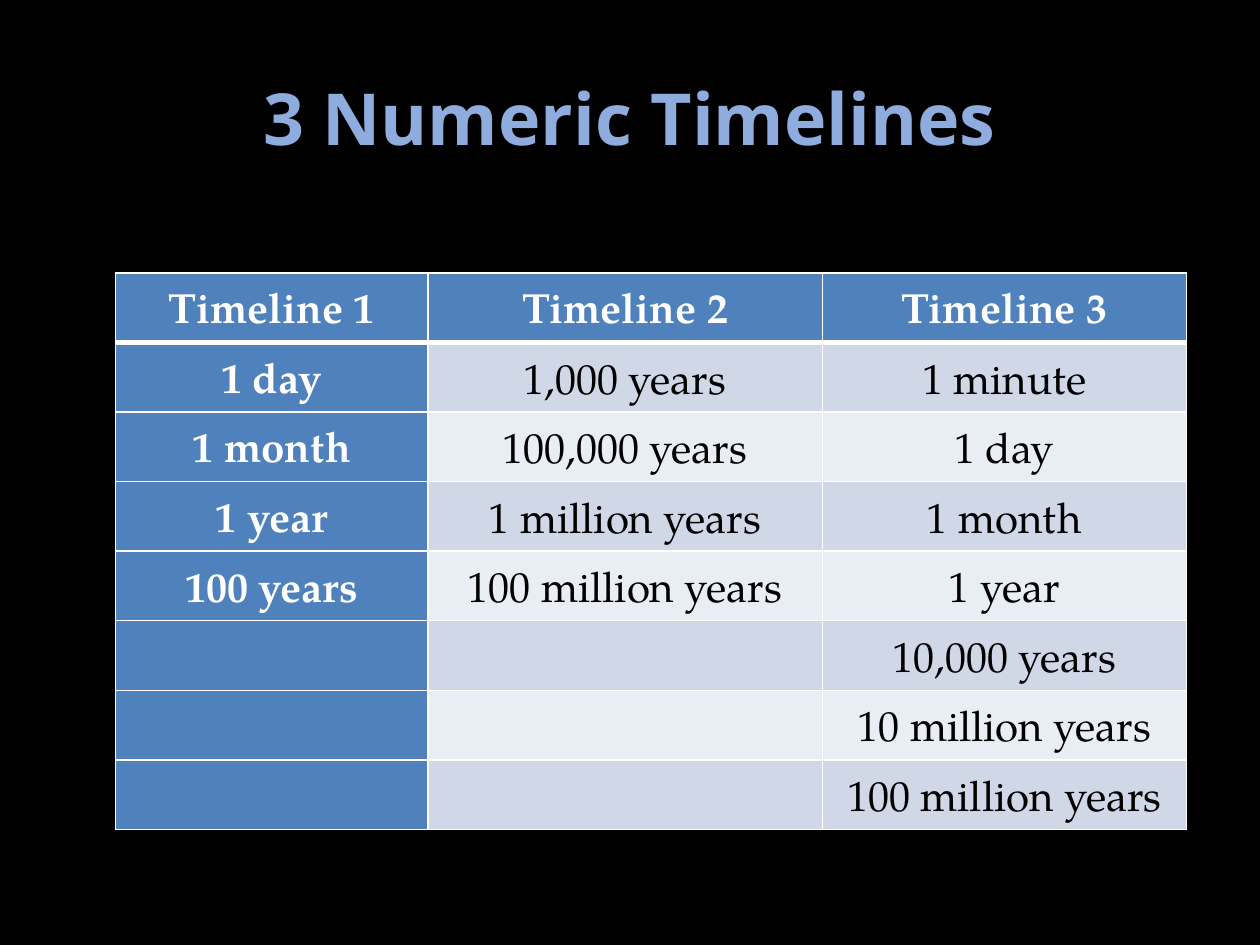
from lxml.etree import SubElement
from pptx import Presentation
from pptx.dml.color import RGBColor as Rgb
from pptx.enum.text import MSO_ANCHOR as Anchor, PP_ALIGN as Align
from pptx.oxml.ns import qn
from pptx.util import Pt

HUES = {
    "back": "000000", "title": "8FACDE", "head": "4F81BD",
    "odd": "D0D8E8", "even": "E9EDF4", "light": "FFFFFF", "dark": "000000",
}
LINES = {
    "Timeline 1": ["1 day", "1 month", "1 year", "100 years"],
    "Timeline 2": ["1,000 years", "100,000 years", "1 million years",
                   "100 million years"],
    "Timeline 3": ["1 minute", "1 day", "1 month", "1 year", "10,000 years",
                   "10 million years", "100 million years"],
}
WIDTHS = [178.5, 225.4, 208.1]
ROW = 39.75


def hue(name):
    return Rgb.from_string(HUES[name])


def add_run(para, text, font, size, color, bold):
    run = para.add_run()
    run.text = text
    run.font.name = font
    run.font.size = Pt(size)
    run.font.bold = bold
    run.font.color.rgb = hue(color)
    para.alignment = Align.CENTER


def add_edges(cell, base):
    """White rules on all four sides, the lower one base points wide."""
    props = cell._tc.get_or_add_tcPr()
    for side, wide in (("L", 1), ("R", 1), ("T", 1), ("B", base)):
        edge = SubElement(props, qn(f"a:ln{side}"), w=str(Pt(wide)))
        fill = SubElement(edge, qn("a:solidFill"))
        SubElement(fill, qn("a:srgbClr"), val=HUES["light"])


def put_title(slide, left, top, width, height):
    title = slide.shapes.title
    title.left, title.top = Pt(left), Pt(top)
    title.width, title.height = Pt(width), Pt(height)
    frame = title.text_frame
    frame.vertical_anchor = Anchor.MIDDLE
    add_run(frame.paragraphs[0], "3 Numeric Timelines", "Open Sans", 41,
            "title", True)


def fill_cell(cell, text, row, col):
    strong = row == 0 or col == 0
    add_edges(cell, 3 if row == 0 else 1)
    cell.fill.solid()
    cell.fill.fore_color.rgb = hue(
        "head" if strong else "odd" if row % 2 else "even")
    cell.margin_left = cell.margin_right = Pt(5)
    cell.margin_top = cell.margin_bottom = 0
    if text:
        para = cell.text_frame.paragraphs[0]
        para.line_spacing = 1.5
        add_run(para, text, "TeX Gyre Pagella", 24,
                "light" if strong else "dark", strong)


def put_table(slide, left, top):
    count = 1 + max(map(len, LINES.values()))
    table = slide.shapes.add_table(
        count, len(LINES), Pt(left), Pt(top), Pt(sum(WIDTHS)),
        Pt(count * ROW)).table
    for row in table.rows:
        row.height = Pt(ROW)
    for col, (head, spans) in enumerate(LINES.items()):
        table.columns[col].width = Pt(WIDTHS[col])
        texts = [head, *spans]
        for row in range(count):
            text = texts[row] if row < len(texts) else ""
            fill_cell(table.cell(row, col), text, row, col)


def main():
    deck = Presentation()
    deck.slide_width, deck.slide_height = Pt(720), Pt(540)
    slide = deck.slides.add_slide(deck.slide_layouts[5])

    # Black background
    back = slide.background.fill
    back.solid()
    back.fore_color.rgb = hue("back")

    # Title above the table of timelines
    put_title(slide, 36, 21.6, 648, 90)
    put_table(slide, 66, 156)
    deck.save("out.pptx")


if __name__ == "__main__":
    main()
